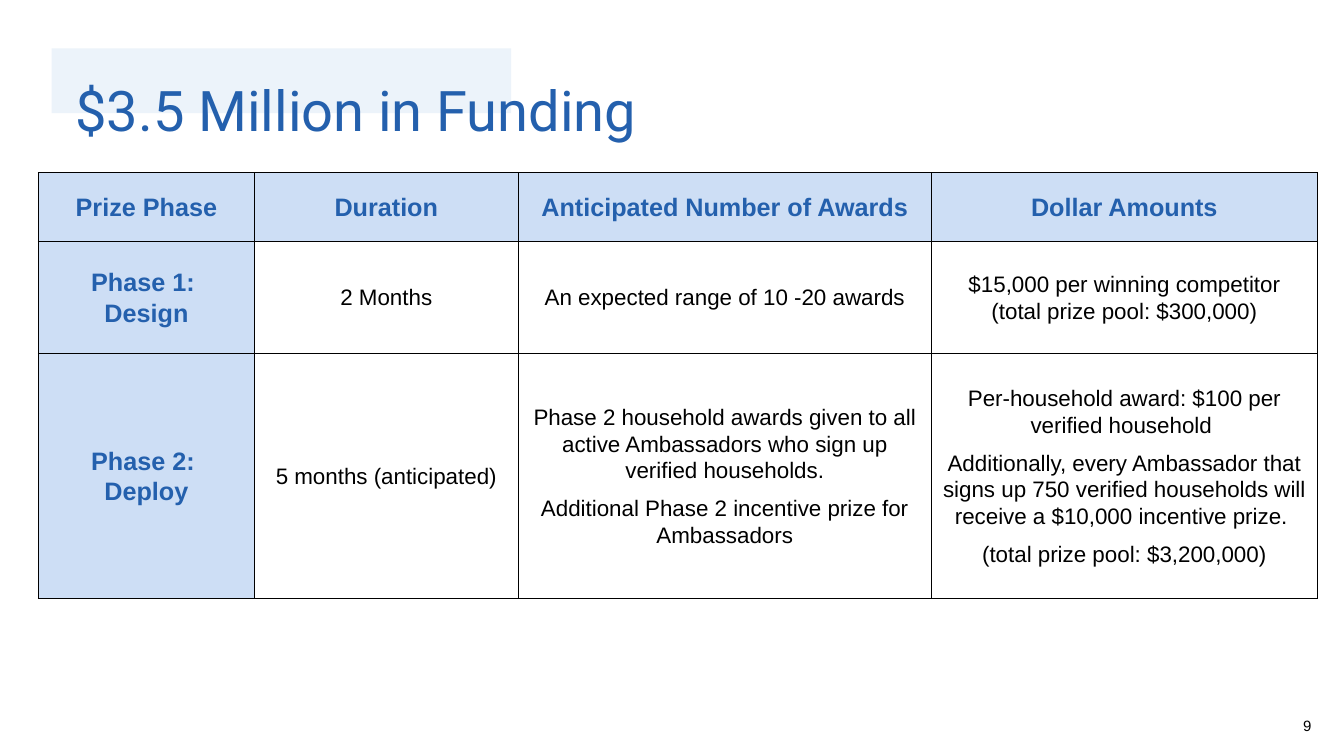
"""Build the prize funding slide with its table of phases."""
from lxml.etree import SubElement
from pptx import Presentation
from pptx.dml.color import RGBColor
from pptx.enum.shapes import MSO_SHAPE
from pptx.enum.text import MSO_ANCHOR, MSO_AUTO_SIZE, PP_ALIGN
from pptx.oxml.ns import qn
from pptx.util import Cm, Pt

BLUE = RGBColor(0x24, 0x60, 0xAD)
PALE = RGBColor(0xEC, 0xF3, 0xFA)
SKY = RGBColor(0xCD, 0xDE, 0xF5)
WHITE = RGBColor(0xFF, 0xFF, 0xFF)
BLACK = RGBColor(0, 0, 0)

WIDTHS = [5.44, 6.65, 10.41, 9.73]
HEIGHTS = [1.73, 2.82, 6.19]
ROWS = [
    [["Prize Phase"], ["Duration"], ["Anticipated Number of Awards"], ["Dollar Amounts"]],
    [
        ["Phase 1: \nDesign"],
        ["2 Months"],
        ["An expected range of 10 -20 awards"],
        ["$15,000 per winning competitor (total prize pool: $300,000)"],
    ],
    [
        ["Phase 2: \nDeploy"],
        ["5 months (anticipated)"],
        [
            "Phase 2 household awards given to all active Ambassadors who sign up verified households.",
            "Additional Phase 2 incentive prize for Ambassadors",
        ],
        [
            "Per-household award: $100 per verified household ",
            "Additionally, every Ambassador that signs up 750 verified households will receive a $10,000 incentive prize. ",
            "(total prize pool: $3,200,000)",
        ],
    ],
]


class Page:
    """Hold the style and the current slide."""

    def __init__(self, deck, font="Arial", head="Roboto"):
        """Add a title-only slide to the deck."""
        self.slide = deck.slides.add_slide(deck.slide_layouts[5])
        self.font = font
        self.head = head

    def style(self, para, size, color, bold=False, font=None):
        """Format every run of a paragraph."""
        for run in para.runs:
            run.font.name = font or self.font
            run.font.size = Pt(size)
            run.font.bold = bold
            run.font.color.rgb = color

    def band(self, left, top, width, height):
        """Draw the pale band behind the title."""
        shape = self.slide.shapes.add_shape(
            MSO_SHAPE.RECTANGLE, Cm(left), Cm(top), Cm(width), Cm(height))
        shape.shadow.inherit = False
        shape.fill.solid()
        shape.fill.fore_color.rgb = PALE
        shape.line.fill.background()
        shape.element.getparent().insert(2, shape.element)

    def title(self, text, left, top, width, height):
        """Place and format the title."""
        box = self.slide.shapes.title
        box.left, box.top, box.width, box.height = map(Cm, (left, top, width, height))
        frame = box.text_frame
        frame.text = text
        frame.auto_size = MSO_AUTO_SIZE.NONE
        frame.vertical_anchor = MSO_ANCHOR.MIDDLE
        para = frame.paragraphs[0]
        para.alignment = PP_ALIGN.LEFT
        para.line_spacing = 0.9
        self.style(para, 40, BLUE, font=self.head)

    def number(self, text, left, top, width, height):
        """Write the page number."""
        box = self.slide.shapes.add_textbox(Cm(left), Cm(top), Cm(width), Cm(height))
        frame = box.text_frame
        frame.word_wrap = True
        frame.text = text
        para = frame.paragraphs[0]
        para.alignment = PP_ALIGN.RIGHT
        self.style(para, 10.7, BLACK)

    def border(self, cell):
        """Give a cell a thin black line on each side."""
        props = cell._tc.get_or_add_tcPr()
        for side in ("lnL", "lnR", "lnT", "lnB"):
            line = SubElement(props, qn(f"a:{side}"), w=str(Pt(1)))
            fill = SubElement(line, qn("a:solidFill"))
            SubElement(fill, qn("a:srgbClr"), val=str(BLACK))

    def cell(self, cell, texts, key):
        """Fill one cell, as a heading when key is true."""
        self.border(cell)
        cell.fill.solid()
        cell.fill.fore_color.rgb = SKY if key else WHITE
        cell.vertical_anchor = MSO_ANCHOR.MIDDLE
        cell.margin_left = cell.margin_right = Cm(0.25)
        cell.margin_top = cell.margin_bottom = 0
        frame = cell.text_frame
        for i, text in enumerate(texts):
            para = frame.add_paragraph() if i else frame.paragraphs[0]
            para.text = text
            para.alignment = PP_ALIGN.CENTER
            para.line_spacing = 1.07
            para.space_after = Pt(8)
            self.style(para, 18 if key else 16, BLUE if key else BLACK, key)

    def table(self, rows, left, top, widths, heights):
        """Draw the table with its first row and column as headings."""
        table = self.slide.shapes.add_table(
            len(rows), len(widths), Cm(left), Cm(top),
            Cm(sum(widths)), Cm(sum(heights))).table
        for col, width in zip(table.columns, widths):
            col.width = Cm(width)
        for r, (row, height) in enumerate(zip(rows, heights)):
            table.rows[r].height = Cm(height)
            for c, texts in enumerate(row):
                self.cell(table.cell(r, c), texts, r == 0 or c == 0)


def main():
    """Build and save the deck."""
    deck = Presentation()
    deck.slide_width, deck.slide_height = Cm(33.87), Cm(19.05)
    page = Page(deck)
    page.band(1.3, 1.22, 11.58, 1.63)
    page.title("$3.5 Million in Funding", 1.65, 1.35, 19.53, 3.02)
    page.table(ROWS, 0.97, 4.35, WIDTHS, HEIGHTS)
    page.number("9", 24.87, 17.93, 8.43, 0.71)
    deck.save("out.pptx")


if __name__ == "__main__":
    main()
